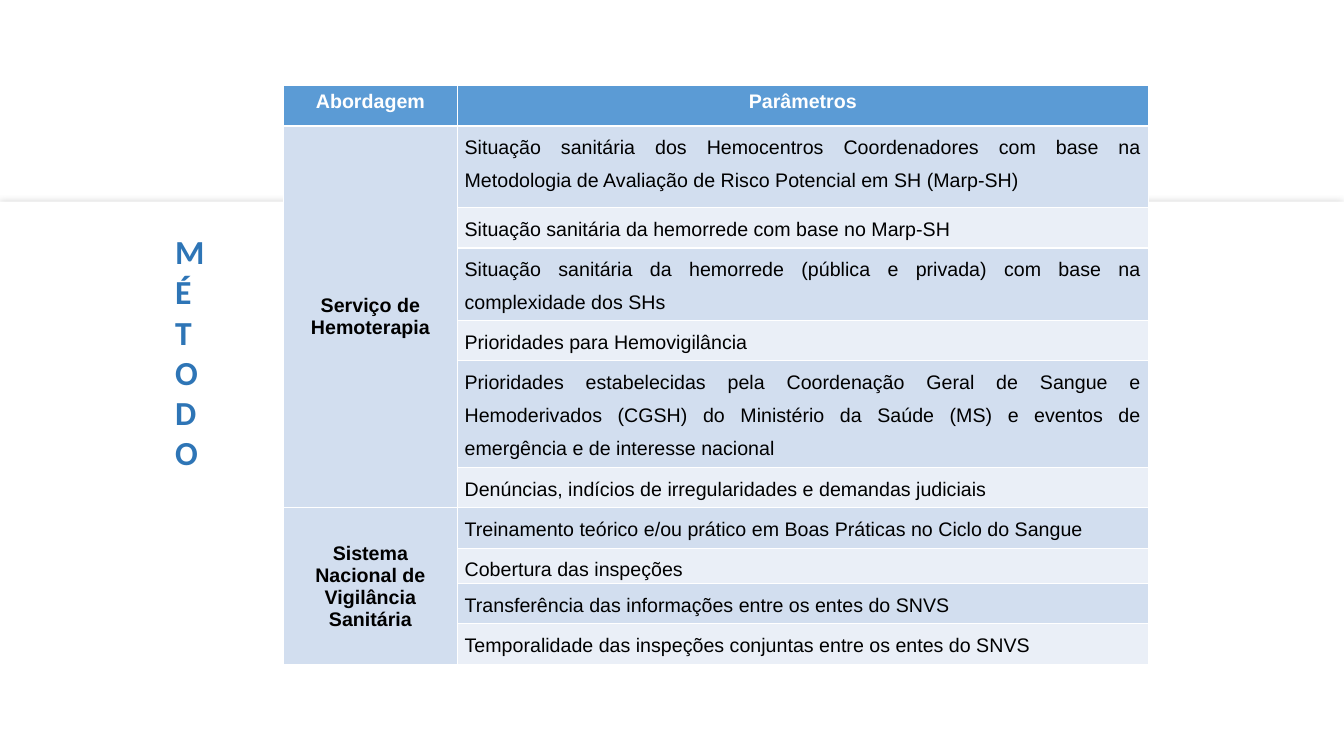
import lxml.etree
import pptx
import pptx.dml.color
import pptx.enum.shapes
import pptx.enum.text
import pptx.oxml.ns
import pptx.util
from dataclasses import dataclass

Pt = pptx.util.Pt
qn = pptx.oxml.ns.qn
rgb = pptx.dml.color.RGBColor.from_string
ALIGN = pptx.enum.text.PP_ALIGN
ANCHOR = pptx.enum.text.MSO_ANCHOR


@dataclass(frozen=True)
class Theme:
    white: str = "FFFFFF"
    black: str = "000000"
    header: str = "5B9BD5"
    bands: tuple = ("D2DEEF", "EAEFF7")
    title: str = "2E75B6"
    shadow: str = "A6A6A6"
    table_font: str = "Arial"
    title_font: str = "Calibri"
    table_size: int = 14
    title_size: int = 24


theme = Theme()


def apply_format(target, values):
    for name, value in values.items():
        setattr(target, name, value)


def fill_cell(cell, text, fill, color, bold, layout, paragraph_format):
    cell.text = text
    cell.fill.solid()
    cell.fill.fore_color.rgb = rgb(fill)
    apply_format(cell, layout)
    paragraph = cell.text_frame.paragraphs[0]
    apply_format(paragraph, paragraph_format)
    font = paragraph.runs[0].font
    apply_format(font, {"name": theme.table_font, "size": Pt(theme.table_size), "bold": bold})
    font.color.rgb = rgb(color)


approaches = [
    ("Serviço de Hemoterapia", [
        ("Situação sanitária dos Hemocentros Coordenadores com base na Metodologia de Avaliação de Risco Potencial em SH (Marp-SH)", 58.3),
        ("Situação sanitária da hemorrede com base no Marp-SH", 28.8),
        ("Situação sanitária da hemorrede (pública e privada) com base na complexidade dos SHs", 51.8),
        ("Prioridades para Hemovigilância", 28.8),
        ("Prioridades estabelecidas pela Coordenação Geral de Sangue e Hemoderivados (CGSH) do Ministério da Saúde (MS) e eventos de emergência e de interesse nacional", 76.3),
        ("Denúncias, indícios de irregularidades e demandas judiciais", 28.8),
    ]),
    ("Sistema Nacional de Vigilância Sanitária", [
        ("Treinamento teórico e/ou prático em Boas Práticas no Ciclo do Sangue", 28.8),
        ("Cobertura das inspeções", 25.2),
        ("Transferência das informações entre os entes do SNVS", 28.8),
        ("Temporalidade das inspeções conjuntas entre os entes do SNVS", 29.5),
    ]),
]
header_height = 28.8
column_widths = [124.6, 493.2]
row_heights = [header_height] + [height for _, parameters in approaches for _, height in parameters]

presentation = pptx.Presentation()
apply_format(presentation, {"slide_width": Pt(960), "slide_height": Pt(540)})
slide = presentation.slides.add_slide(presentation.slide_layouts[6])

lower_panel = slide.shapes.add_shape(
    pptx.enum.shapes.MSO_SHAPE.RECTANGLE, Pt(0), Pt(144), Pt(960), Pt(396))
lower_panel.fill.solid()
lower_panel.fill.fore_color.rgb = rgb(theme.white)
lower_panel.line.fill.background()
lower_panel.shadow.inherit = False
effects = lower_panel.element.spPr.find(qn("a:effectLst"))
glow = lxml.etree.SubElement(
    effects, qn("a:outerShdw"), blurRad=str(Pt(5)), dist="0", dir="0", algn="ctr", rotWithShape="0")
glow_color = lxml.etree.SubElement(glow, qn("a:srgbClr"), val=theme.shadow)
lxml.etree.SubElement(glow_color, qn("a:alpha"), val="42000")

parameter_table = slide.shapes.add_table(
    len(row_heights), len(column_widths), Pt(202.3), Pt(61.2),
    Pt(sum(column_widths)), Pt(sum(row_heights))).table
for column, width in zip(parameter_table.columns, column_widths):
    column.width = Pt(width)
for row, height in zip(parameter_table.rows, row_heights):
    row.height = Pt(height)

centred = {"alignment": ALIGN.CENTER}
justified = {"alignment": ALIGN.JUSTIFY, "line_spacing": 1.5}
middle = {"vertical_anchor": ANCHOR.MIDDLE}
tight = {"margin_left": Pt(5), "margin_right": Pt(5), "margin_top": Pt(0), "margin_bottom": Pt(0)}

for index, heading in enumerate(["Abordagem", "Parâmetros"]):
    fill_cell(parameter_table.cell(0, index), heading, theme.header, theme.white, True, {}, centred)

first_row = 1
for approach, parameters in approaches:
    approach_cell = parameter_table.cell(first_row, 0)
    approach_cell.merge(parameter_table.cell(first_row + len(parameters) - 1, 0))
    fill_cell(approach_cell, approach, theme.bands[0], theme.black, True, middle, centred)
    for offset, (parameter, _) in enumerate(parameters):
        fill_cell(parameter_table.cell(first_row + offset, 1), parameter,
                  theme.bands[offset % 2], theme.black, False, tight, justified)
    first_row += len(parameters)

method_title = slide.shapes.add_textbox(Pt(118), Pt(161.3), Pt(49), Pt(215.3))
apply_format(method_title.text_frame, {
    "text": "MÉTODO", "word_wrap": True,
    "auto_size": pptx.enum.text.MSO_AUTO_SIZE.SHAPE_TO_FIT_TEXT})
method_title.element.txBody.find(qn("a:bodyPr")).set("vert", "wordArtVert")
title_font = method_title.text_frame.paragraphs[0].runs[0].font
apply_format(title_font, {"name": theme.title_font, "size": Pt(theme.title_size), "bold": True})
title_font.color.rgb = rgb(theme.title)

presentation.save("out.pptx")
